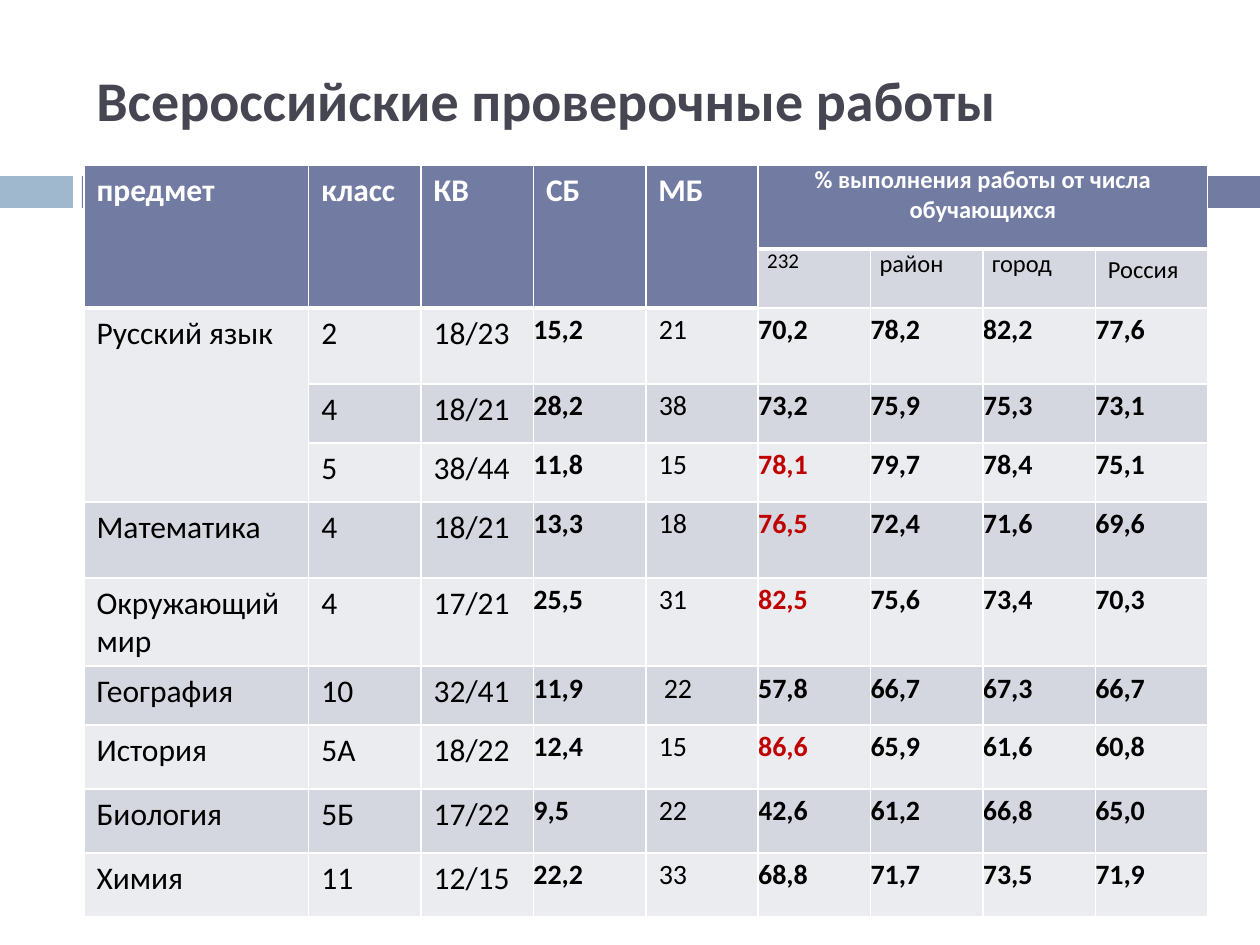
"""Build a slide with a table of national test results by subject."""
from pptx import Presentation
from pptx.dml.color import RGBColor
from pptx.enum.shapes import MSO_SHAPE
from pptx.enum.text import MSO_ANCHOR, PP_ALIGN
from pptx.oxml import parse_xml
from pptx.oxml.ns import nsdecls
from pptx.util import Emu, Pt

WHITE = RGBColor(0xFF, 0xFF, 0xFF)
BLACK = RGBColor(0, 0, 0)
RED = RGBColor(0xC0, 0, 0)
SLATE = RGBColor(0x46, 0x46, 0x53)
BLUE = RGBColor(0x72, 0x7C, 0xA3)
SKY = RGBColor(0x9F, 0xB8, 0xCD)
DARK = RGBColor(0xD5, 0xD7, 0xE0)
LIGHT = RGBColor(0xEB, 0xEC, 0xF0)


def px(num):
    return Emu(round(num * 914400 / 126))


def write(box, text, size=18, color=BLACK, bold=False, align=PP_ALIGN.LEFT, lead=None):
    para = box.text_frame.paragraphs[0]
    para.alignment = align
    para.line_spacing = lead
    run = para.add_run()
    run.text = text
    font = run.font
    font.name = "Calibri"
    font.size = Pt(size)
    font.bold = bold
    font.color.rgb = color


deck = Presentation()
deck.slide_width, deck.slide_height = px(1260), px(945)
slide = deck.slides.add_slide(deck.slide_layouts[6])

for left, width, color in [(0, 73, SKY), (82, 1178, BLUE)]:
    bar = slide.shapes.add_shape(MSO_SHAPE.RECTANGLE, px(left), px(176), px(width), px(32))
    bar.shadow.inherit = False
    bar.fill.solid()
    bar.fill.fore_color.rgb = color
    bar.line.fill.background()

title = slide.shapes.add_textbox(px(84), px(31), px(1124), px(136))
title.text_frame.word_wrap = True
title.text_frame.vertical_anchor = MSO_ANCHOR.MIDDLE
write(title, "Всероссийские проверочные работы", size=32, color=SLATE, bold=True)

heads = ["предмет", "класс", "КВ", "СБ", "МБ", "% выполнения работы от числа обучающихся"]
places = ["232", "район", "город", "Россия"]
marks = [
    ["Русский язык", "2", "18/23", "15,2", "21", "70,2", "78,2", "82,2", "77,6"],
    ["", "4", "18/21", "28,2", "38", "73,2", "75,9", "75,3", "73,1"],
    ["", "5", "38/44", "11,8", "15", "78,1", "79,7", "78,4", "75,1"],
    ["Математика", "4", "18/21", "13,3", "18", "76,5", "72,4", "71,6", "69,6"],
    ["Окружающий мир", "4", "17/21", "25,5", "31", "82,5", "75,6", "73,4", "70,3"],
    ["География", "10", "32/41", "11,9", "22", "57,8", "66,7", "67,3", "66,7"],
    ["История", "5А", "18/22", "12,4", "15", "86,6", "65,9", "61,6", "60,8"],
    ["Биология", "5Б", "17/22", "9,5", "22", "42,6", "61,2", "66,8", "65,0"],
    ["Химия", "11", "12/15", "22,2", "33", "68,8", "71,7", "73,5", "71,9"],
]
best = {"78,1", "76,5", "82,5", "86,6"}
rows = [84, 59, 76, 59, 59, 76, 87, 59, 64, 64, 64]

table = slide.shapes.add_table(11, 9, px(84), px(165), px(1124), px(sum(rows))).table
table.first_row = table.horz_banding = False
for col in range(9):
    table.columns[col].width = px(1124 * (2 if col == 0 else 1) / 10)
for row, high in enumerate(rows):
    table.rows[row].height = px(high)

for row in range(11):
    for col in range(9):
        cell = table.cell(row, col)
        tall = col < 5
        top = row == 2 and tall or row == 1 and not tall
        base = row == 1 and tall or row == 0
        for side, wide in [("L", 1), ("R", 1), ("T", 3 if top else 1), ("B", 3 if base else 1)]:
            cell._tc.get_or_add_tcPr().append(parse_xml(
                f'<a:ln{side} {nsdecls("a")} w="{Pt(wide)}"><a:solidFill>'
                f'<a:srgbClr val="{WHITE}"/></a:solidFill></a:ln{side}>'))
        cell.fill.solid()
        head = row == 0 or row == 1 and tall
        cell.fill.fore_color.rgb = BLUE if head else LIGHT if row % 2 == 0 else DARK

for col, text in enumerate(heads):
    cell = table.cell(0, col)
    if col < 5:
        cell.merge(table.cell(1, col))
        write(cell, text, color=WHITE, bold=True)
    else:
        cell.merge(table.cell(0, 8))
        cell.margin_left = cell.margin_right = px(9)
        cell.margin_top = cell.margin_bottom = 0
        write(cell, text, size=14, color=WHITE, bold=True, align=PP_ALIGN.CENTER)

for col, text in enumerate(places, 5):
    cell = table.cell(1, col)
    if col < 8:
        cell.margin_left = cell.margin_right = px(9)
        cell.margin_top = cell.margin_bottom = 0
    write(cell, text, size=12 if col == 5 else 14)

table.cell(2, 0).merge(table.cell(4, 0))
for row, line in enumerate(marks, 2):
    loose = line[0] == "География"
    for col, text in enumerate(line):
        cell = table.cell(row, col)
        if col < 3:
            if text:
                write(cell, text)
            continue
        mid = col == 4
        cell.margin_left = px((18 if loose else 13) if mid else 0)
        cell.margin_right = px(5 if mid else 0)
        cell.margin_top = cell.margin_bottom = px(6 if loose else 0)
        write(cell, text, size=16, bold=not mid, lead=None if loose else 1.15,
              color=RED if text in best and col == 5 else BLACK)

deck.save("out.pptx")
